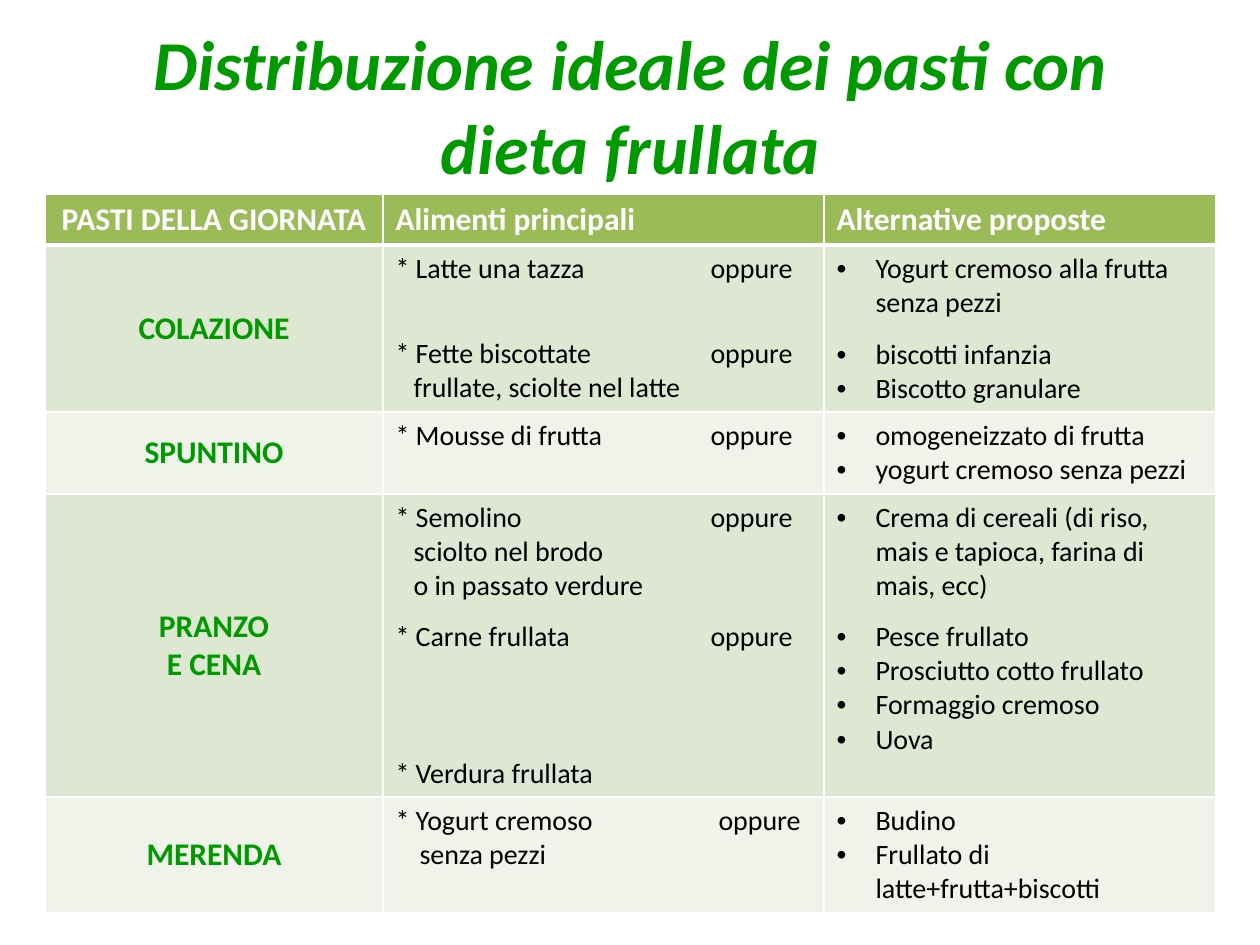
from lxml.etree import SubElement
from pptx import Presentation
from pptx.dml.color import RGBColor
from pptx.enum.text import MSO_ANCHOR, MSO_AUTO_SIZE, PP_ALIGN
from pptx.oxml.ns import qn
from pptx.util import Pt

SCALE = 914400 / 126
FONT = "Calibri"
COLORS = {
    "green": "009900",
    "header": "9BBB59",
    "odd": "DEE7D1",
    "even": "EFF3EA",
    "white": "FFFFFF",
    "black": "000000",
}
COLUMN_WIDTHS = [338, 441, 392]
ROW_HEIGHTS = [50, 167, 82, 303, 115]
HEADINGS = ["PASTI DELLA GIORNATA", "Alimenti principali", "Alternative proposte"]
BULLET_INDENT = 39
FOOD_STOPS = (18, 315)
SNACK_STOPS = (24, 323)

MEALS = [
    (["COLAZIONE"],
     (FOOD_STOPS, [("* Latte una tazza\toppure", 0), ("* Fette biscottate\toppure", 29),
                   ("frullate, sciolte nel latte", 0)]),
     [("Yogurt cremoso alla frutta senza pezzi", 0), ("biscotti infanzia", 10),
      ("Biscotto granulare", 0)]),
    (["SPUNTINO"],
     (FOOD_STOPS, [("* Mousse di frutta\toppure", 0)]),
     [("omogeneizzato di frutta", 0), ("yogurt cremoso senza pezzi", 0)]),
    (["PRANZO", "E CENA"],
     (FOOD_STOPS, [("* Semolino\toppure", 0), ("sciolto nel brodo", 0),
                   ("o in passato verdure", 0), ("* Carne frullata\toppure", 9.5),
                   ("* Verdura frullata", 58.5)]),
     [("Crema di cereali (di riso, mais e tapioca, farina di mais, ecc)", 0),
      ("Pesce frullato", 9.5), ("Prosciutto cotto frullato", 0),
      ("Formaggio cremoso", 0), ("Uova", 0)]),
    (["MERENDA"],
     (SNACK_STOPS, [("* Yogurt cremoso\toppure", 0), ("senza pezzi", 0)]),
     [("Budino", 0), ("Frullato di latte+frutta+biscotti", 0)]),
]


def px(length):
    return round(length * SCALE)


def rgb(name):
    return RGBColor.from_string(COLORS[name])


def add_text(paragraph, text, size, color, bold=False, italic=False):
    run = paragraph.add_run()
    run.text = text
    font = run.font
    font.name, font.size, font.bold, font.italic = FONT, Pt(size), bold, italic
    font.color.rgb = rgb(color)


def add_lines(cell, lines):
    frame = cell.text_frame
    for number, (text, gap) in enumerate(lines):
        line = frame.add_paragraph() if number else frame.paragraphs[0]
        line.space_before = Pt(gap)
        yield line, text


def style_cell(cell, fill, top=1, bottom=1):
    properties = cell._tc.get_or_add_tcPr()
    for side, width in (("L", 1), ("R", 1), ("T", top), ("B", bottom)):
        border = SubElement(properties, qn(f"a:ln{side}"), w=str(Pt(width)))
        paint = SubElement(border, qn("a:solidFill"))
        SubElement(paint, qn("a:srgbClr"), val=COLORS["white"])
    cell.fill.solid()
    cell.fill.fore_color.rgb = rgb(fill)


def fill_heading(cell, heading, first):
    style_cell(cell, "header", bottom=3)
    cell.vertical_anchor = MSO_ANCHOR.TOP if first else MSO_ANCHOR.MIDDLE
    paragraph = cell.text_frame.paragraphs[0]
    paragraph.alignment = PP_ALIGN.CENTER if first else PP_ALIGN.LEFT
    add_text(paragraph, heading, 18, "white", bold=True)


def fill_meal(cell, names):
    cell.vertical_anchor = MSO_ANCHOR.MIDDLE
    for line, name in add_lines(cell, [(name, 0) for name in names]):
        line.alignment = PP_ALIGN.CENTER
        add_text(line, name, 18, "green", bold=True)


def fill_foods(cell, content):
    (indent, oppure_stop), foods = content
    for line, food in add_lines(cell, foods):
        properties = line._p.get_or_add_pPr()
        if not food.startswith("*"):
            properties.set("marL", str(px(indent)))
        if "\t" in food:
            stops = SubElement(properties, qn("a:tabLst"))
            SubElement(stops, qn("a:tab"), pos=str(px(oppure_stop)), algn="l")
        add_text(line, food, 16, "black")


def fill_alternatives(cell, alternatives):
    for line, alternative in add_lines(cell, alternatives):
        properties = line._p.get_or_add_pPr()
        properties.set("marL", str(px(BULLET_INDENT)))
        properties.set("indent", str(-px(BULLET_INDENT)))
        SubElement(properties, qn("a:buFont"), typeface="Arial")
        SubElement(properties, qn("a:buChar"), char="•")
        add_text(line, alternative, 16, "black")


def place_title(slide, left, top, width, height):
    title = slide.shapes.title
    title.left, title.top = px(left), px(top)
    title.width, title.height = px(width), px(height)
    title.fill.solid()
    title.fill.fore_color.rgb = rgb("white")
    paint = title._element.spPr.find(f".//{qn('a:srgbClr')}")
    SubElement(paint, qn("a:alpha"), val="47000")
    frame = title.text_frame
    frame.word_wrap = True
    frame.auto_size = MSO_AUTO_SIZE.NONE
    frame.vertical_anchor = MSO_ANCHOR.MIDDLE
    heading = frame.paragraphs[0]
    heading.alignment = PP_ALIGN.CENTER
    add_text(heading, "Distribuzione ideale dei pasti con dieta frullata",
             40, "green", bold=True, italic=True)


def place_meal_table(slide, left, top):
    meals = slide.shapes.add_table(
        len(ROW_HEIGHTS), len(COLUMN_WIDTHS), px(left), px(top),
        px(sum(COLUMN_WIDTHS)), px(sum(ROW_HEIGHTS))).table
    for column, width in zip(meals.columns, COLUMN_WIDTHS):
        column.width = px(width)
    for row, height in zip(meals.rows, ROW_HEIGHTS):
        row.height = px(height)
    for column, heading in enumerate(HEADINGS):
        fill_heading(meals.cell(0, column), heading, column == 0)
    fillers = (fill_meal, fill_foods, fill_alternatives)
    for row, meal in enumerate(MEALS, 1):
        for column, (fill, content) in enumerate(zip(fillers, meal)):
            cell = meals.cell(row, column)
            style_cell(cell, "odd" if row % 2 else "even", top=3 if row == 1 else 1)
            fill(cell, content)


def main():
    presentation = Presentation()
    presentation.slide_width, presentation.slide_height = px(1260), px(945)
    slide = presentation.slides.add_slide(presentation.slide_layouts[5])
    place_meal_table(slide, 45, 194)
    place_title(slide, 63, 26, 1134, 158)
    presentation.save("out.pptx")


if __name__ == "__main__":
    main()
